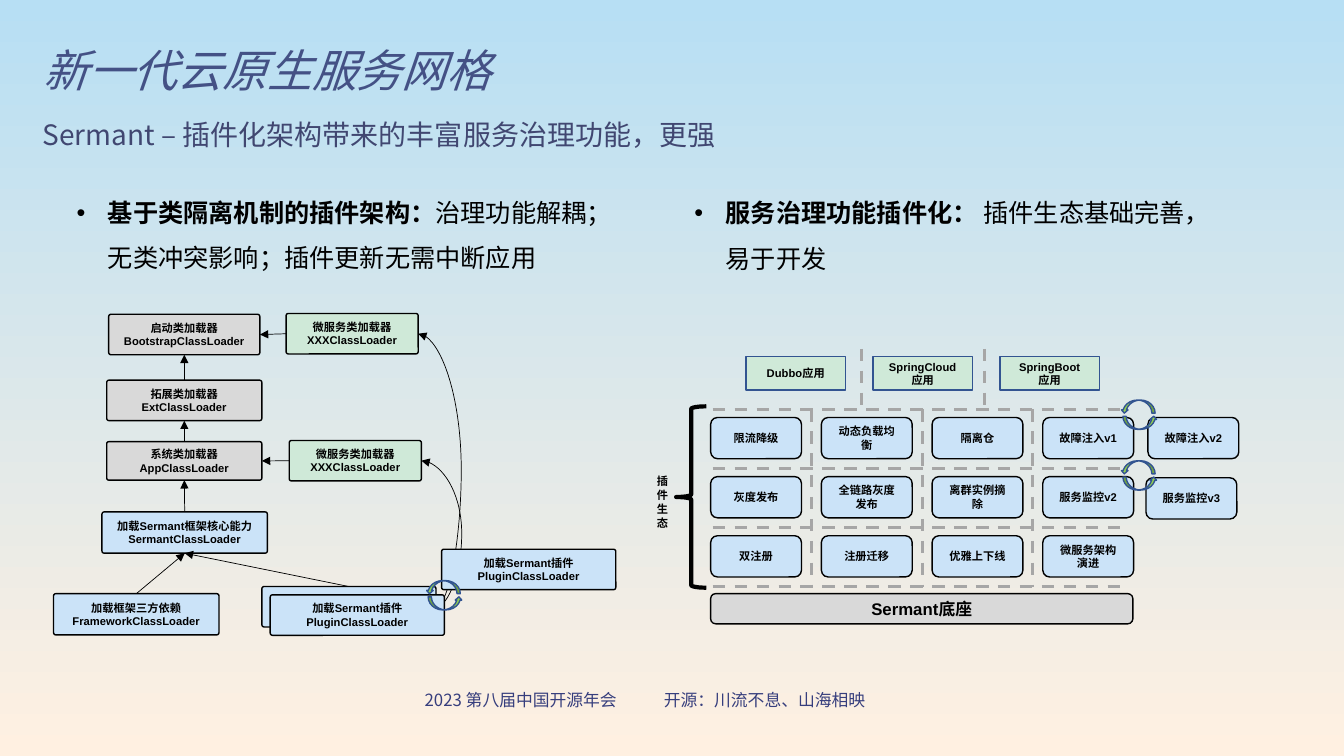
from lxml.etree import SubElement
from pptx import Presentation
from pptx.dml.color import RGBColor
from pptx.enum.dml import MSO_LINE
from pptx.enum.shapes import MSO_CONNECTOR as Link, MSO_SHAPE as Shape
from pptx.enum.text import MSO_ANCHOR as Anchor, PP_ALIGN as Align
from pptx.oxml.ns import qn
from pptx.util import Cm, Pt

SKY, SAND = RGBColor(0xB7, 0xDF, 0xF4), RGBColor(0xFF, 0xF0, 0xE1)
BLACK = RGBColor(0, 0, 0)
GREY, DASH_GREY = RGBColor(0xD9, 0xD9, 0xD9), RGBColor(0xA6, 0xA6, 0xA6)
BLUE, GREEN = RGBColor(0xCB, 0xE3, 0xF8), RGBColor(0xCF, 0xE9, 0xD8)
EDGE_BLUE, ARROW_GREEN = RGBColor(0x32, 0x54, 0x91), RGBColor(0x92, 0xD0, 0x50)
TITLE = RGBColor(0x44, 0x51, 0x85)
SUBTITLE = RGBColor(0x41, 0x47, 0x71)
FOOTER = RGBColor(0x36, 0x3E, 0x7D)
LATIN, HAN = "Arial", "Noto Sans CJK SC"

TOP, LEFT, BOTTOM, RIGHT = range(4)  # connection sites of a box

PLUGINS = [
    ["限流降级", "动态负载均衡", "隔离仓", "故障注入v1"],
    ["灰度发布", "全链路灰度发布", "离群实例摘除", "服务监控v2"],
    ["双注册", "注册迁移", "优雅上下线", "微服务架构演进"],
]


def add_span(para, text, size, color, font=HAN, bold=False, italic=False):
    span = para.add_run()
    span.text = text
    span.font.name, span.font.size = font, Pt(size)
    span.font.bold, span.font.italic = bold, italic
    span.font.color.rgb = color
    SubElement(span.font._element, qn("a:ea")).set("typeface", HAN)


def add_box(page, kind, left, top, width, height, fill, edge=BLACK, weight=1):
    box = page.shapes.add_shape(kind, Cm(left), Cm(top), Cm(width), Cm(height))
    box.shadow.inherit = False
    if fill is None:
        box.fill.background()
    else:
        box.fill.solid()
        box.fill.fore_color.rgb = fill
    box.line.color.rgb, box.line.width = edge, Pt(weight)
    return box


def add_label(box, text, size=8):
    """Centre bold text in a box, one paragraph for each line of text."""
    frame = box.text_frame
    frame.vertical_anchor = Anchor.MIDDLE
    for index, line in enumerate(text.split("\n")):
        para = frame.add_paragraph() if index else frame.paragraphs[0]
        para.alignment = Align.CENTER
        add_span(para, line, size, BLACK, LATIN, bold=True)


def add_text(page, left, top, width, height, tight=False):
    """Add a wrapping text box and return its frame."""
    frame = page.shapes.add_textbox(Cm(left), Cm(top), Cm(width), Cm(height)).text_frame
    frame.word_wrap = True
    if tight:
        frame.margin_left = frame.margin_right = frame.margin_bottom = 0
        frame.margin_top = Cm(0.03)
    return frame


def add_line(page, kind, color, weight, ends=(0, 0, 0, 0)):
    line = page.shapes.add_connector(kind, *map(Cm, ends))
    line.line.color.rgb, line.line.width = color, Pt(weight)
    SubElement(line._element.spPr, qn("a:effectLst"))
    return line


def add_arrow(page, source, source_site, target, target_site, bend=None):
    line = add_line(page, Link.STRAIGHT if bend is None else Link.CURVE, BLACK, 0.5)
    line.begin_connect(source, source_site)
    line.end_connect(target, target_site)
    SubElement(line.line._get_or_add_ln(), qn("a:tailEnd")).set("type", "triangle")
    if bend is not None:
        guides = line._element.spPr.find(qn("a:prstGeom")).get_or_add_avLst()
        guide = SubElement(guides, qn("a:gd"))
        guide.set("name", "adj1")
        guide.set("fmla", f"val {bend}")


def add_swap_icon(page, left, top):
    """Add two curved arrows that circle each other."""
    for shift_x, shift_y, turn in ((0.05, 0.41, 0), (0, 0, 180)):
        arrow = add_box(page, Shape.CURVED_UP_ARROW, left + shift_x, top + shift_y,
                        0.86, 0.33, ARROW_GREEN, EDGE_BLUE)
        arrow.rotation = turn


def add_header(page, left, top):
    frame = add_text(page, left, top, 12.42, 1.7)
    frame.vertical_anchor = Anchor.MIDDLE
    frame.paragraphs[0].line_spacing = 0.9
    add_span(frame.paragraphs[0], "新一代云原生服务网格", 32, TITLE, italic=True)
    frame = add_text(page, left + 0.23, top + 1.93, 18.21, 0.89, tight=True)
    add_span(frame.paragraphs[0], "Sermant – 插件化架构带来的丰富服务治理功能，更强", 20, SUBTITLE)


def add_point(page, left, top, width, height, lead, rest, tight=False):
    para = add_text(page, left, top, width, height, tight).paragraphs[0]
    para.line_spacing = 1.5
    layout = para._p.get_or_add_pPr()
    layout.set("marL", str(Cm(0.84)))
    layout.set("indent", str(Cm(-0.79)))
    SubElement(layout, qn("a:buFont")).set("typeface", LATIN)
    SubElement(layout, qn("a:buChar")).set("char", "•")
    add_span(para, lead, 18, BLACK, bold=True)
    add_span(para, rest, 18, BLACK)


def add_loader_diagram(page, left, top):
    def loader(x, y, width, height, fill, text):
        box = add_box(page, Shape.ROUNDED_RECTANGLE, left + x, top + y, width, height, fill)
        box.adjustments[0] = 0.055
        add_label(box, text)
        return box

    def plugin(x, y):
        return loader(x, y, 4.39, 1.02, BLUE, "加载Sermant插件PluginClassLoader")

    def service(x, y):
        return loader(x, y, 3.33, 1.02, GREEN, "微服务类加载器\nXXXClassLoader")

    bootstrap = loader(1.39, 0.02, 3.81, 1.02, GREY, "启动类加载器\nBootstrapClassLoader")
    extension = loader(1.34, 1.68, 3.91, 1.02, GREY, "拓展类加载器\nExtClassLoader")
    system = loader(1.34, 3.23, 3.91, 0.97, GREY, "系统类加载器\nAppClassLoader")
    core = loader(1.22, 5, 4.17, 1.04, BLUE, "加载Sermant框架核心能力SermantClassLoader")
    framework = loader(0, 7.06, 4.17, 1.04, BLUE, "加载框架三方依赖\nFrameworkClassLoader")
    upper_service, lower_service = service(5.86, 0), service(5.94, 3.2)
    old_plugin = plugin(5.25, 6.88)

    for child, parent in ((extension, bootstrap), (system, extension), (core, system),
                          (framework, core), (old_plugin, core)):
        add_arrow(page, child, TOP, parent, BOTTOM)
    for child, parent in ((upper_service, bootstrap), (lower_service, system)):
        add_arrow(page, child, LEFT, parent, RIGHT)
    for parent, bend in ((upper_service, -141400), (lower_service, -175400)):
        add_arrow(page, old_plugin, RIGHT, parent, RIGHT, bend)

    plugin(5.46, 7.09)
    plugin(9.78, 5.94)
    add_swap_icon(page, left + 9.39, top + 6.73)


def add_plugin_diagram(page, left, top):
    def plugin(x, y, text):
        add_label(add_box(page, Shape.ROUNDED_RECTANGLE, left + x, top + y,
                          2.29, 1.04, BLUE), text)

    def dashes(x1, y1, x2, y2):
        line = add_line(page, Link.STRAIGHT, DASH_GREY, 2.25,
                        (left + x1, top + y1, left + x2, top + y2))
        line.line.dash_style = MSO_LINE.DASH

    add_box(page, Shape.LEFT_BRACE, left + 0.91, top + 1.45, 0.76, 4.57, None, weight=3)
    frame = add_text(page, left, top + 2.95, 1.02, 1.63)
    frame.word_wrap = False
    frame._txBody.bodyPr.set("vert", "eaVert")
    frame.paragraphs[0].line_spacing = 1.5
    add_span(frame.paragraphs[0], "插 件 生 态", 8, BLACK, LATIN, bold=True)

    base = add_box(page, Shape.ROUNDED_RECTANGLE, left + 1.78, top + 6.17, 10.64, 0.76, GREY)
    add_label(base, "Sermant底座", 12)
    for row, names in enumerate(PLUGINS):
        for column, name in enumerate(names):
            plugin(1.78 + 2.79 * column, 1.73 + 1.49 * row, name)
    for index, name in enumerate(("Dubbo应用", "SpringCloud\n应用", "SpringBoot\n应用")):
        app = add_box(page, Shape.RECTANGLE, left + 2.67 + 3.2 * index, top + 0.2,
                      2.51, 0.84, GREEN, EDGE_BLUE)
        add_label(app, name)

    for row in range(4):
        dashes(1.83, 1.52 + 1.49 * row, 12.3, 1.52 + 1.49 * row)
    for column in range(3):
        dashes(4.32 + 2.79 * column, 1.52, 4.32 + 2.79 * column, 5.99)
    for gap in range(2):
        dashes(5.59 + 3.1 * gap, 0, 5.59 + 3.1 * gap, 1.52)

    for x, y, name in ((12.8, 1.73, "故障注入v2"), (12.75, 3.25, "服务监控v3")):
        plugin(x, y, name)
    for y in (1.29, 2.82):
        add_swap_icon(page, left + 12.12, top + y)


def add_footer(page, left, top):
    for x, width, text in ((0, 6.99, "2023 第八届中国开源年会"),
                           (6.58, 6.12, "开源：川流不息、山海相映")):
        para = add_text(page, left + x, top, width, 0.76).paragraphs[0]
        para.alignment = Align.CENTER
        add_span(para, text, 12, FOOTER)


def main():
    deck = Presentation()
    deck.slide_width, deck.slide_height = Cm(33.87), Cm(19.05)
    page = deck.slides.add_slide(deck.slide_layouts[6])
    fill = page.background.fill
    fill.gradient()
    fill.gradient_angle = 270
    for stop, color, position in zip(fill.gradient_stops, (SKY, SAND), (0, 1)):
        stop.color.rgb, stop.position = color, position

    add_footer(page, 9.63, 17.26)
    add_header(page, 0.84, 0.99)
    add_point(page, 1.63, 4.47, 14.45, 2.44, "基于类隔离机制的插件架构：",
              "治理功能解耦；无类冲突影响；插件更新无需中断应用")
    add_point(page, 17.45, 4.57, 12.6, 2.21, "服务治理功能插件化： ",
              "插件生态基础完善，易于开发", tight=True)
    add_loader_diagram(page, 1.35, 7.9)
    add_plugin_diagram(page, 16.13, 8.79)
    deck.save("out.pptx")


if __name__ == "__main__":
    main()
